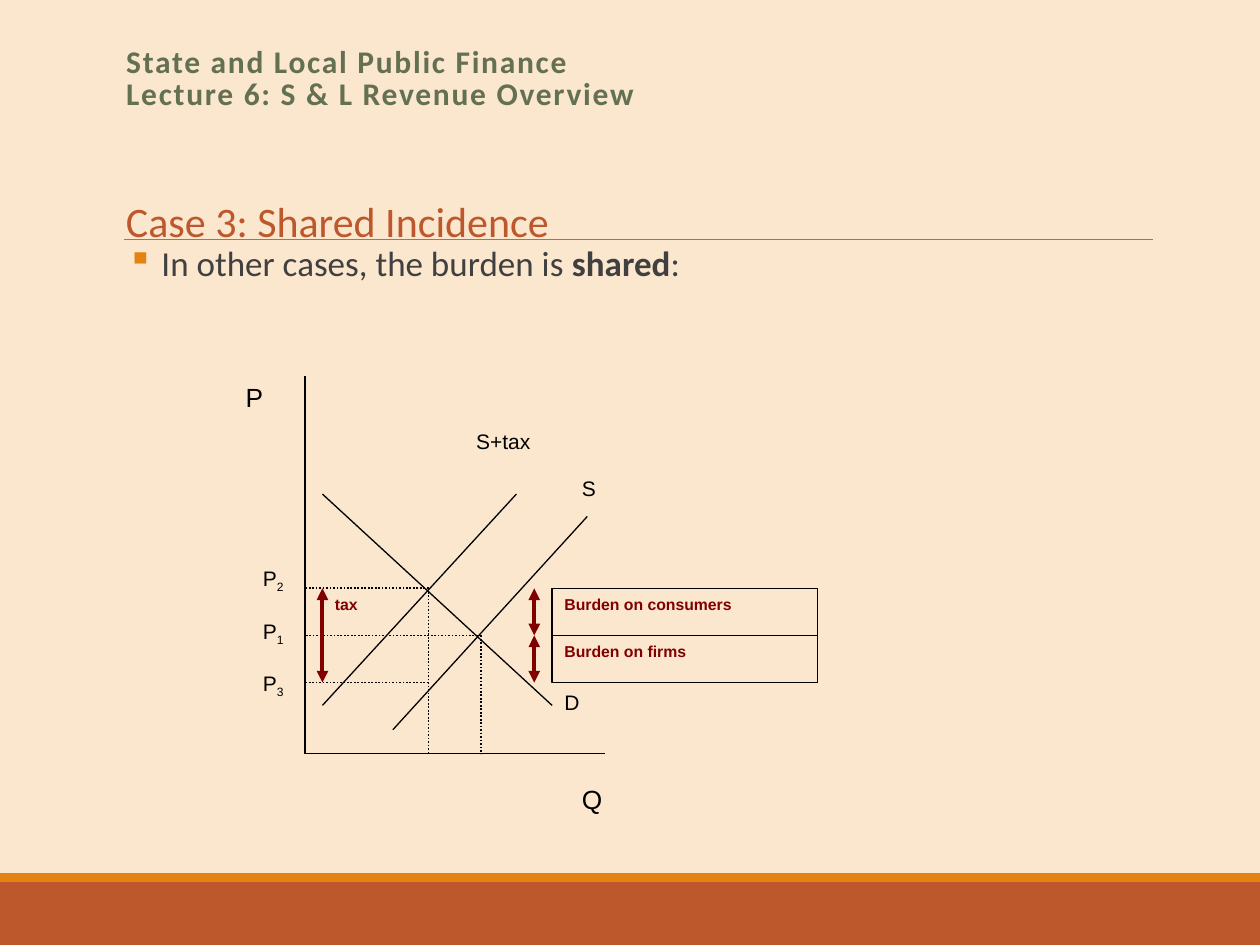
"""Build a lecture slide showing how a tax burden is shared in a supply and demand graph."""
import pptx
import pptx.util
import pptx.dml.color
import pptx.enum.dml
import pptx.enum.shapes
import pptx.enum.text
import pptx.oxml.ns
import lxml.etree

Cm = pptx.util.Cm
Pt = pptx.util.Pt
COLORS = {
    "background": "FBE6CE", "rust": "BD582C", "orange": "E48312", "rule": "808080",
    "green": "637052", "body": "404040", "ink": "000000", "burden": "800000",
}
AXIS_X, AXIS_Y = 6.15, 15.19
PRICE_2, PRICE_1, PRICE_3 = 11.86, 12.81, 13.76
QUANTITY_TAX, QUANTITY = 8.64, 9.7
TAX_X, BURDEN_X, BOX_X = 6.5, 10.77, 11.13


def rgb(name):
    """Return the named colour."""
    return pptx.dml.color.RGBColor.from_string(COLORS[name])


def add_element(parent, tag, **attributes):
    """Append a DrawingML element to the parent."""
    return lxml.etree.SubElement(parent, pptx.oxml.ns.qn(tag), **attributes)


def place(shape, left, top, width, height):
    """Move and size a shape, in centimetres."""
    shape.left, shape.top, shape.width, shape.height = map(Cm, (left, top, width, height))


def format_paragraph(paragraph, size, color, font="Arial", bold=False):
    """Set the font and left alignment of a paragraph."""
    paragraph.alignment = pptx.enum.text.PP_ALIGN.LEFT
    paragraph.font.name = font
    paragraph.font.size = Pt(size)
    paragraph.font.bold = bold
    paragraph.font.color.rgb = rgb(color)


def add_text(slide, box, text, size, color="ink", font="Arial", bold=False, wrap=True):
    """Add a text box with one paragraph and return its text frame."""
    frame = slide.shapes.add_textbox(*map(Cm, box)).text_frame
    frame.word_wrap = wrap
    paragraph = frame.paragraphs[0]
    paragraph.text = text
    format_paragraph(paragraph, size, color, font, bold)
    return frame


def add_rectangle(slide, box, fill, line=None):
    """Add a filled rectangle, outlined only when a line colour is named."""
    kind = pptx.enum.shapes.MSO_SHAPE.RECTANGLE
    rectangle = slide.shapes.add_shape(kind, *map(Cm, box))
    rectangle.shadow.inherit = False
    rectangle.fill.solid()
    rectangle.fill.fore_color.rgb = rgb(fill)
    if line:
        rectangle.line.color.rgb = rgb(line)
        rectangle.line.width = Pt(0.75)
    else:
        rectangle.line.fill.background()
    return rectangle


def add_line(slide, start, end, color="ink", width=0.75):
    """Add a straight line without a shadow."""
    kind = pptx.enum.shapes.MSO_CONNECTOR.STRAIGHT
    line = slide.shapes.add_connector(kind, *map(Cm, (*start, *end)))
    line.line.color.rgb = rgb(color)
    line.line.width = Pt(width)
    add_element(line._element.spPr, "a:effectLst")
    return line


def add_guide(slide, start, end):
    """Add a dotted guide line."""
    guide = add_line(slide, start, end, width=1)
    guide.line.dash_style = pptx.enum.dml.MSO_LINE.ROUND_DOT


def add_span(slide, x, top, bottom):
    """Add a vertical double-headed arrow."""
    arrow = add_line(slide, (x, top), (x, bottom), "burden", 2.25)
    outline = arrow.line._get_or_add_ln()
    for end in ("a:headEnd", "a:tailEnd"):
        add_element(outline, end, type="triangle")


def add_price_label(slide, top, number):
    """Add the letter P with a subscript number."""
    frame = add_text(slide, (5.05, top, 1.42, 1.42), "P", 12)
    run = frame.paragraphs[0].add_run()
    run.text = number
    run.font._element.set("baseline", "-25000")


def add_burden_box(slide, top, text):
    """Add a labelled box for one side's share of the tax, with its arrow."""
    height = PRICE_1 - PRICE_2
    rectangle = add_rectangle(slide, (BOX_X, top, 5.35, height), "background", "ink")
    frame = rectangle.text_frame
    frame.vertical_anchor = pptx.enum.text.MSO_ANCHOR.TOP
    frame.text = text
    format_paragraph(frame.paragraphs[0], 9, "burden", bold=True)
    add_span(slide, BURDEN_X, top, top + height)


def add_frame(slide):
    """Add the background, the footer bands and the heading rule."""
    slide.background.fill.solid()
    slide.background.fill.fore_color.rgb = rgb("background")
    add_rectangle(slide, (0, 17.78, 25.4, 1.27), "rust")
    add_rectangle(slide, (0, 17.6, 25.4, 0.18), "orange")
    add_line(slide, (2.49, 4.83), (23.24, 4.83), "rule", 0.5)


def add_headings(slide):
    """Fill the title placeholder and add the case heading."""
    title = slide.shapes.title
    place(title, 2.29, 0.84, 20.96, 1.65)
    frame = title.text_frame
    frame.text = "State and Local Public Finance\vLecture 6: S & L Revenue Overview"
    frame.vertical_anchor = pptx.enum.text.MSO_ANCHOR.TOP
    frame.auto_size = pptx.enum.text.MSO_AUTO_SIZE.NONE
    paragraph = frame.paragraphs[0]
    format_paragraph(paragraph, 18, "green", "Calibri", True)
    paragraph.line_spacing = 0.85
    paragraph._p.pPr.find(pptx.oxml.ns.qn("a:defRPr")).set("spc", "100")
    add_text(slide, (2.29, 3.81, 9.27, 1.27), "Case 3: Shared Incidence", 24,
             "rust", "Calibri", wrap=False)


def add_bullet(slide):
    """Add the bulleted sentence with its bold word."""
    frame = add_text(slide, (2.57, 4.83, 12.85, 1.02), " In other cases, the burden is ",
                     20, "body", "Calibri")
    frame.margin_left = frame.margin_right = 0
    paragraph = frame.paragraphs[0]
    for text, bold in (("shared", True), (":", False)):
        run = paragraph.add_run()
        run.text = text
        run.font.bold = bold
    paragraph.line_spacing = 0.9
    paragraph.space_before, paragraph.space_after = Pt(6.8), Pt(1.1)
    properties = paragraph._p.pPr
    properties.set("marL", str(Cm(0.15)))
    properties.set("indent", str(Cm(-0.15)))
    bullet_color = add_element(properties, "a:buClr")
    add_element(bullet_color, "a:srgbClr", val=COLORS["orange"])
    add_element(properties, "a:buChar", char="▪")
    properties.append(properties.find(pptx.oxml.ns.qn("a:defRPr")))


def add_graph(slide):
    """Add the axes, curves, guides, labels and burden arrows."""
    for start, end in (
        ((AXIS_X, 7.57), (AXIS_X, AXIS_Y)),
        ((AXIS_X, AXIS_Y), (12.19, AXIS_Y)),
        ((TAX_X, 9.96), (BOX_X, 14.22)),
        ((TAX_X, 14.22), (10.41, 9.96)),
        ((7.92, 14.71), (11.84, 10.41)),
    ):
        add_line(slide, start, end)
    for price, quantity in ((PRICE_2, QUANTITY_TAX), (PRICE_1, QUANTITY), (PRICE_3, QUANTITY_TAX)):
        add_guide(slide, (quantity, price), (AXIS_X, price))
    for price, quantity in ((PRICE_2, QUANTITY_TAX), (PRICE_1, QUANTITY)):
        add_guide(slide, (quantity, price), (quantity, AXIS_Y))
    for left, top, width, text, size in (
        (4.7, 7.57, 1.07, "P", 15), (11.48, 15.67, 1.07, "Q", 15),
        (11.48, 9.47, 1.78, "S", 12), (9.35, 8.51, 2.49, "S+tax", 12),
        (BOX_X, 13.77, 1.78, "D", 12),
    ):
        add_text(slide, (left, top, width, 1.42), text, size)
    for top, number in ((12.34, "1"), (11.28, "2"), (13.39, "3")):
        add_price_label(slide, top, number)
    add_span(slide, TAX_X, PRICE_2, PRICE_3)
    add_text(slide, (TAX_X, PRICE_2, 1.42, 1.9), "tax", 9, "burden", bold=True)
    add_burden_box(slide, PRICE_2, "Burden on consumers")
    add_burden_box(slide, PRICE_1, "Burden on firms")


def main():
    """Build and save the slide."""
    presentation = pptx.Presentation()
    presentation.slide_width, presentation.slide_height = Cm(25.4), Cm(19.05)
    slide = presentation.slides.add_slide(presentation.slide_layouts[5])
    add_frame(slide)
    add_headings(slide)
    add_bullet(slide)
    add_graph(slide)
    presentation.save("out.pptx")


if __name__ == "__main__":
    main()
